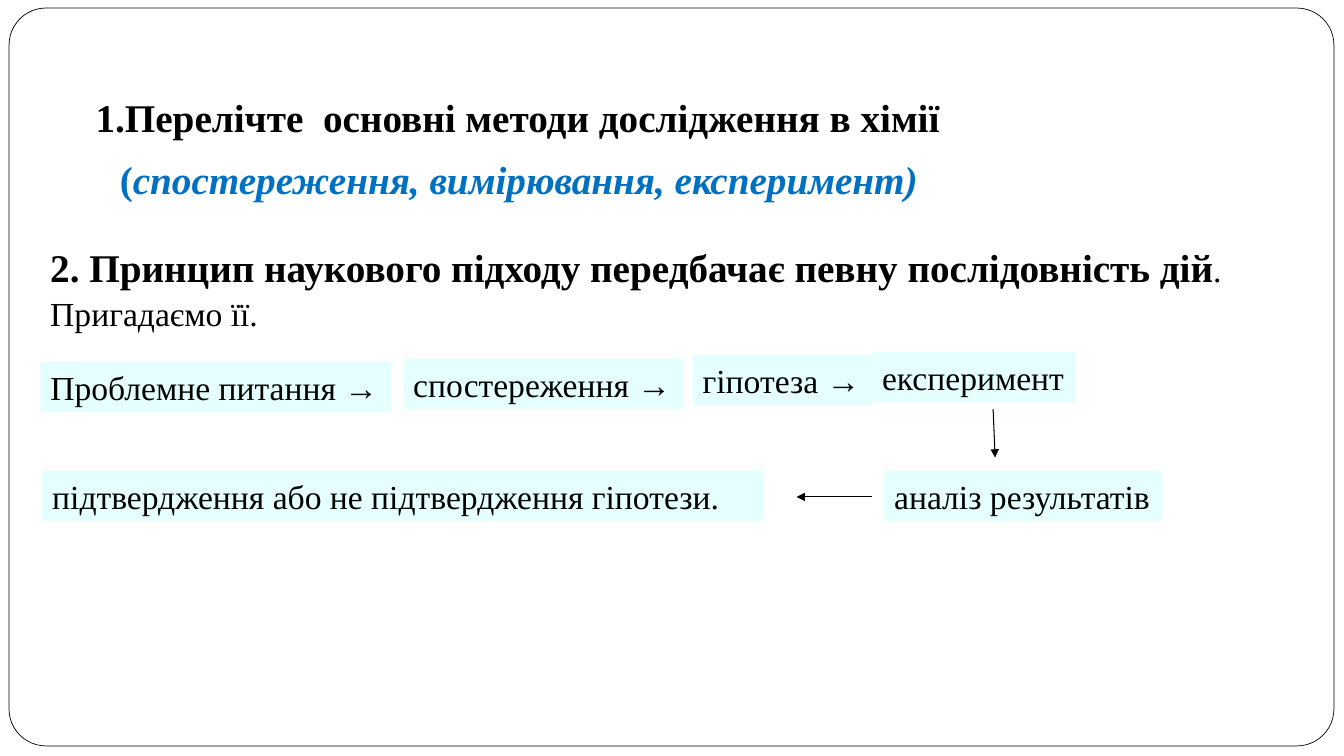
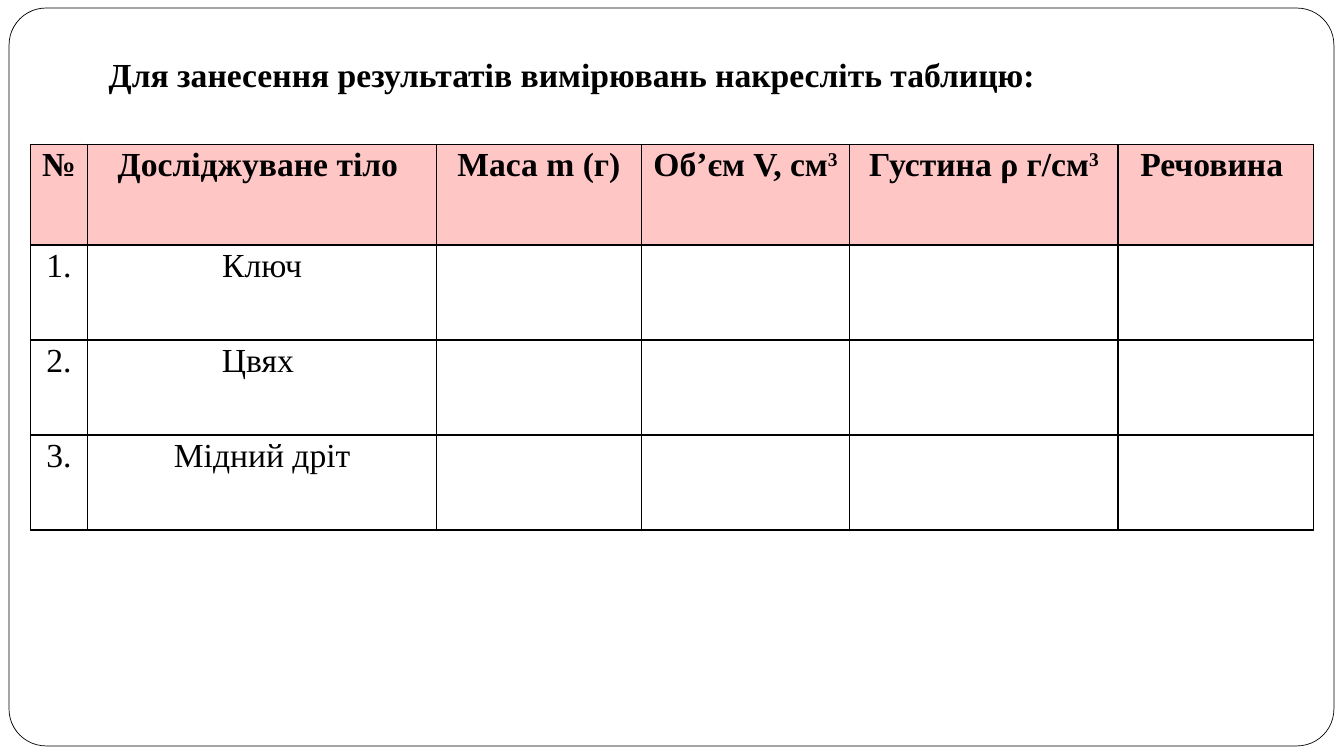
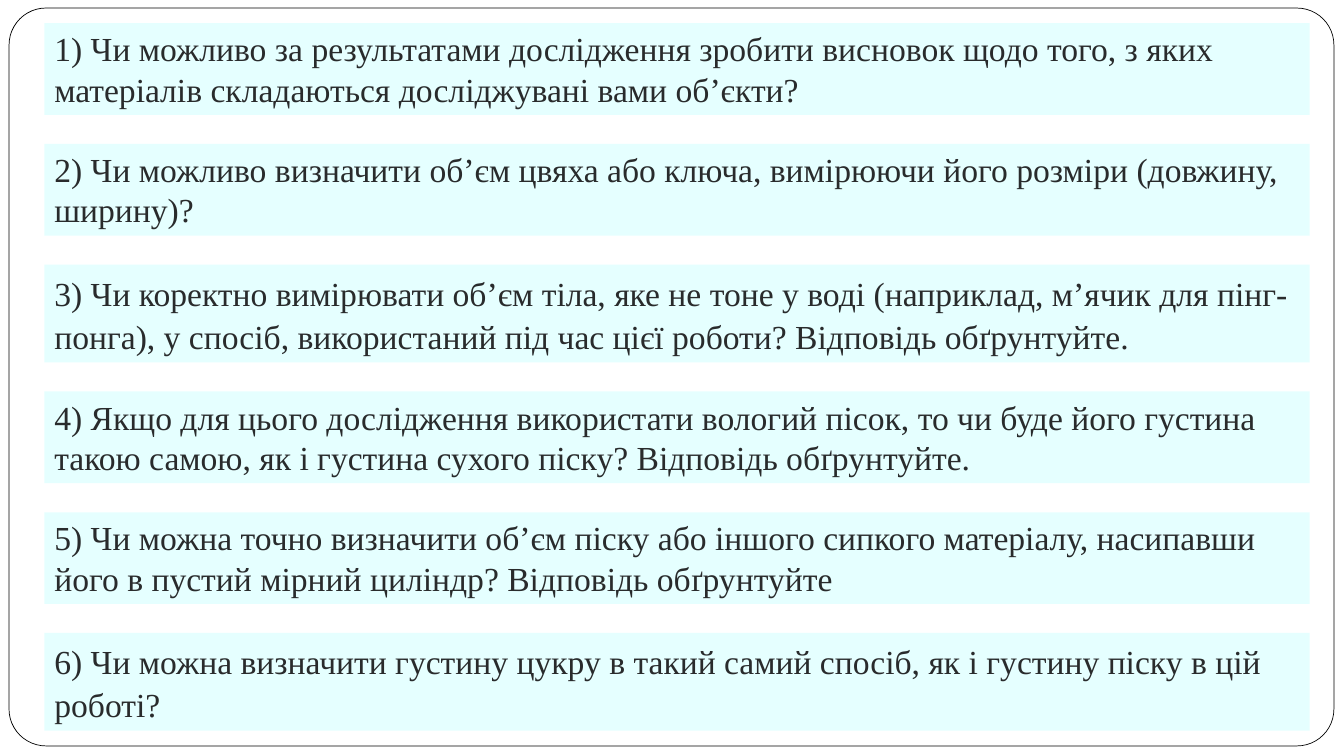
"""Builds three chemistry lesson slides about research methods and measuring density."""
from dataclasses import dataclass
from typing import Optional

from lxml.etree import SubElement
from pptx import Presentation
from pptx.dml.color import RGBColor
from pptx.enum.shapes import MSO_CONNECTOR as Connector, MSO_SHAPE as Preset
from pptx.enum.text import MSO_AUTO_SIZE as AutoSize, PP_ALIGN as Align
from pptx.oxml.ns import qn
from pptx.util import Inches, Pt


@dataclass(frozen=True)
class Theme:
    font: str = "Times New Roman"
    ink: str = "000000"
    question_ink: str = "292B2C"
    answer: str = "0070C0"
    paper: str = "FFFFFF"
    panel: str = "E5FFFF"
    table_head: str = "FFC6C6"
    heading_size: int = 28
    body_size: int = 24
    loose: float = 1.07
    frame_line: float = 0.5
    arrow_line: float = 0.75
    border_line: float = 1


@dataclass(frozen=True)
class Run:
    text: str
    size: Optional[int] = None
    bold: Optional[bool] = None
    italic: Optional[bool] = None
    raised: bool = False


class Deck:
    columns, rows = 133.3, 75
    width, height = Inches(13.33), Inches(7.5)

    def __init__(self, theme):
        self.theme = theme
        self.presentation = Presentation()
        self.presentation.slide_width = self.width
        self.presentation.slide_height = self.height
        self.slide = None

    def across(self, columns):
        return round(self.width * columns / self.columns)

    def down(self, rows):
        return round(self.height * rows / self.rows)

    def area(self, left, top, width, height):
        return self.across(left), self.down(top), self.across(width), self.down(height)

    def paint(self, fill, color):
        fill.solid()
        fill.fore_color.rgb = RGBColor.from_string(color)

    def new_slide(self):
        layout = self.presentation.slide_layouts.get_by_name("Blank")
        self.slide = self.presentation.slides.add_slide(layout)
        self.paint(self.slide.background.fill, self.theme.paper)
        frame = self.slide.shapes.add_shape(
            Preset.ROUNDED_RECTANGLE, *self.area(0.9, 0.8, 131.4, 73.2))
        frame.adjustments[0] = 0.05
        frame.shadow.inherit = False
        self.paint(frame.fill, self.theme.paper)
        self.paint(frame.line.fill, self.theme.ink)
        frame.line.width = Pt(self.theme.frame_line)

    def fill_paragraph(self, paragraph, content, size=None, bold=False, color=None,
                       spacing=None):
        font = paragraph.font
        font.name = self.theme.font
        font.size = Pt(size or self.theme.body_size)
        font.bold = bold
        self.paint(font.fill, color or self.theme.ink)
        if spacing:
            paragraph.line_spacing = spacing
        for part in [Run(content)] if isinstance(content, str) else content:
            run = paragraph.add_run()
            run.text = part.text
            if part.size:
                run.font.size = Pt(part.size)
            if part.bold is not None:
                run.font.bold = part.bold
            if part.italic is not None:
                run.font.italic = part.italic
            if part.raised:
                run._r.get_or_add_rPr().set("baseline", "30000")

    def text(self, content, area, fill=None, wrap=True, **style):
        box = self.slide.shapes.add_textbox(*self.area(*area))
        frame = box.text_frame
        frame.word_wrap = wrap
        frame.auto_size = AutoSize.SHAPE_TO_FIT_TEXT
        if fill:
            self.paint(box.fill, fill)
        self.fill_paragraph(frame.paragraphs[0], content, **style)

    def heading(self, content, area, **style):
        style = {"size": self.theme.heading_size, "bold": True, **style}
        self.text(content, area, spacing=self.theme.loose, **style)

    def panel(self, content, area, **style):
        self.text(content, area, fill=self.theme.panel, **style)

    def arrow(self, start, end):
        (left, top), (right, bottom) = start, end
        arrow = self.slide.shapes.add_connector(
            Connector.STRAIGHT, self.across(left), self.down(top),
            self.across(right), self.down(bottom))
        self.paint(arrow.line.fill, self.theme.ink)
        arrow.line.width = Pt(self.theme.arrow_line)
        SubElement(arrow.line._get_or_add_ln(), qn("a:tailEnd"), type="triangle")
        SubElement(arrow._element.spPr, qn("a:effectLst"))

    def border(self, cell):
        properties = cell._tc.get_or_add_tcPr()
        for side in ("lnL", "lnR", "lnT", "lnB"):
            line = SubElement(properties, qn(f"a:{side}"), w=str(Pt(self.theme.border_line)))
            SubElement(SubElement(line, qn("a:solidFill")), qn("a:srgbClr"), val=self.theme.ink)

    def table(self, left, top, widths, heights, records):
        area = self.area(left, top, sum(widths), sum(heights))
        table = self.slide.shapes.add_table(len(heights), len(widths), *area).table
        table.first_row = table.horz_banding = False
        for column, width in zip(table.columns, widths):
            column.width = self.across(width)
        for row_index, (height, record) in enumerate(zip(heights, records)):
            row, is_head = table.rows[row_index], row_index == 0
            row.height = self.down(height)
            for column_index, cell in enumerate(row.cells):
                self.border(cell)
                cell.margin_left = cell.margin_right = self.across(0.7)
                cell.margin_top = cell.margin_bottom = 0
                if is_head:
                    self.paint(cell.fill, self.theme.table_head)
                else:
                    cell.fill.background()
                if column_index < len(record):
                    paragraph = cell.text_frame.paragraphs[0]
                    paragraph.alignment = Align.CENTER
                    self.fill_paragraph(paragraph, record[column_index], bold=is_head,
                                        spacing=self.theme.loose)


def add_methods(deck):
    deck.new_slide()
    deck.heading("1.Перелічте  основні методи дослідження в хімії", (8.5, 8.4, 116.3, 5.8))
    deck.heading([Run("("), Run("спостереження, вимірювання, експеримент)", italic=True)],
                 (10.9, 14.6, 104.4, 6.1), color=deck.theme.answer)
    deck.heading([Run("2. Принцип наукового підходу передбачає певну послідовність дій"),
                  Run(". Пригадаємо її.", size=deck.theme.body_size, bold=False)],
                 (4, 23.3, 125.4, 10.1))
    panel_height, first_top, rise, result_top = 5, 35.9, 0.33, 46.7
    steps = [("Проблемне питання →", 4, 34.8, True),
             ("спостереження →", 40, 27.8, False),
             ("гіпотеза →", 68.7, 17.8, False),
             ("експеримент", 86.5, 20.2, False)]
    for index, (step, left, width, wrap) in enumerate(steps):
        deck.panel(step, (left, first_top - index * rise, width, panel_height), wrap=wrap)
    deck.panel("аналіз результатів", (87.7, result_top, 27.6, panel_height), wrap=False)
    deck.panel("підтвердження або не підтвердження гіпотези.",
               (4.2, result_top, 71.6, panel_height))
    deck.arrow((98.5, 40.6), (98.7, 45.4))
    deck.arrow((86.5, 49.3), (79, 49.3))


def add_results_table(deck):
    deck.new_slide()
    deck.heading("Для занесення результатів вимірювань накресліть таблицю:",
                 (9.8, 4.6, 118.4, 5.1), size=deck.theme.body_size)
    cubed = Run("3", raised=True)
    records = [
        ["№", "Досліджуване тіло ", "Маса m (г)", [Run("Об’єм V, см"), cubed],
         [Run("Густина ρ г/см"), cubed], "Речовина "],
        ["1.", "Ключ"],
        ["2.", "Цвях "],
        ["3.", "Мідний дріт"],
    ]
    deck.table(3, 14.3, [5.7, 34.6, 20.3, 20.7, 26.6, 19.4], [10] + [9.43] * 3, records)


def add_questions(deck):
    deck.new_slide()
    loose = deck.theme.loose
    questions = [
        ("1) Чи можливо за результатами дослідження зробити висновок щодо того, з яких "
         "матеріалів складаються досліджувані вами об’єкти?", None),
        ("2) Чи можливо визначити об’єм цвяха або ключа, вимірюючи його розміри (довжину, "
         "ширину)?", None),
        ("3) Чи коректно вимірювати об’єм тіла, яке не тоне у воді (наприклад, м’ячик для "
         "пінг-понга), у спосіб, використаний під час цієї роботи? Відповідь обґрунтуйте.",
         loose),
        ("4) Якщо для цього дослідження використати вологий пісок, то чи буде його густина "
         "такою самою, як і густина сухого піску? Відповідь обґрунтуйте.", None),
        ("5) Чи можна точно визначити об’єм піску або іншого сипкого матеріалу, насипавши "
         "його в пустий мірний циліндр? Відповідь обґрунтуйте", None),
        ("6) Чи можна визначити густину цукру в такий самий спосіб, як і густину піску в цій "
         "роботі?", loose),
    ]
    top, gap = 2.3, 2.88
    for question, spacing in questions:
        height = 9.7 if spacing else 9.1
        deck.panel(question, (4.4, top, 125.5, height), spacing=spacing,
                   color=deck.theme.question_ink)
        top += height + gap


def main():
    deck = Deck(Theme())
    add_methods(deck)
    add_results_table(deck)
    add_questions(deck)
    deck.presentation.save("out.pptx")


if __name__ == "__main__":
    main()
